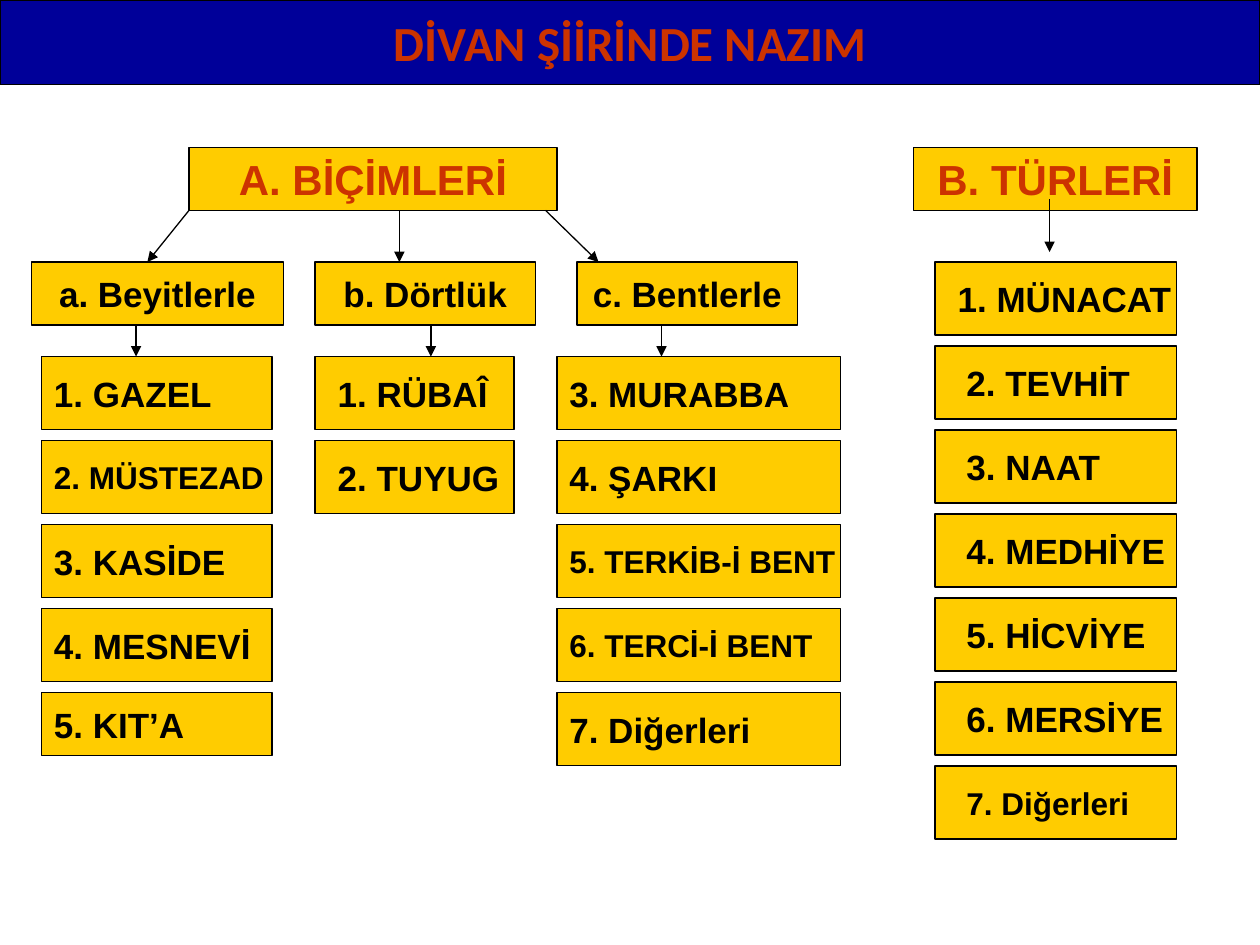
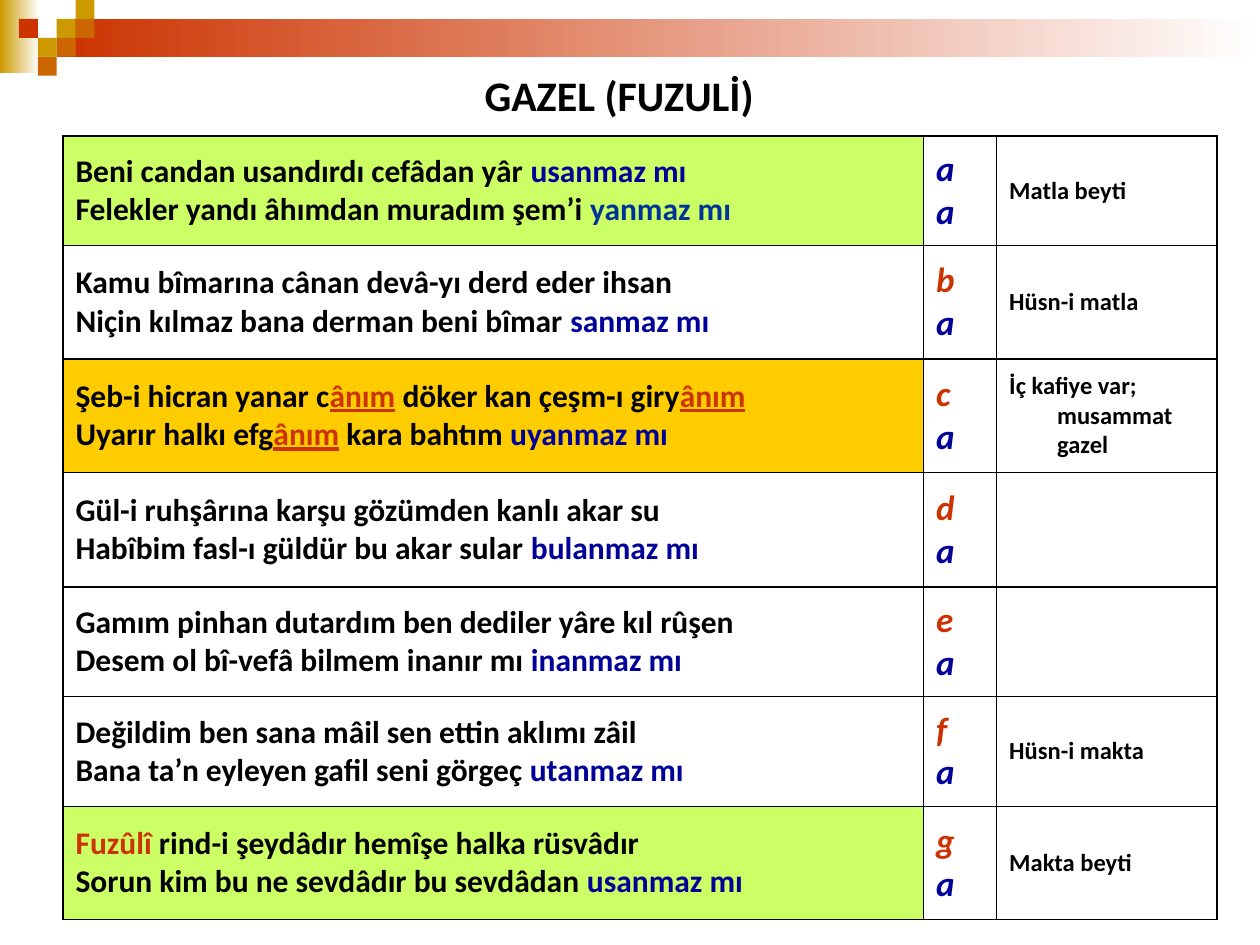
from lxml import etree
from pptx import Presentation
from pptx.dml.color import RGBColor
from pptx.enum.shapes import MSO_CONNECTOR, MSO_SHAPE
from pptx.enum.text import MSO_ANCHOR, PP_ALIGN
from pptx.oxml.ns import qn
from pptx.util import Inches, Pt

RECT = MSO_SHAPE.RECTANGLE
STRAIGHT = MSO_CONNECTOR.STRAIGHT
MIDDLE = MSO_ANCHOR.MIDDLE
LEFT, CENTER = PP_ALIGN.LEFT, PP_ALIGN.CENTER

BLACK = RGBColor(0x00, 0x00, 0x00)
WHITE = RGBColor(0xFF, 0xFF, 0xFF)
NAVY = RGBColor(0x00, 0x00, 0x99)
BLUE = RGBColor(0x00, 0x33, 0x99)
RED = RGBColor(0xCC, 0x33, 0x00)
AMBER = RGBColor(0xFF, 0xCC, 0x00)
GOLD = RGBColor(0xCC, 0x99, 0x00)
BROWN = RGBColor(0xCC, 0x66, 0x00)
LIME = RGBColor(0xCC, 0xFF, 0x66)

HEAD, BODY = "Calibri", "Arial"
PITCH = 2 / 3   # step from one list box to the next
TALL = 0.58     # height of a list box
UNIT = 0.15     # side of a corner square

# Lists of slide 1: left, top, width, left pad, items of (text, size)
LISTS = [
    (0.33, 2.83, 1.83, 0.1, [("1. GAZEL", 20), ("2. MÜSTEZAD", 18), ("3. KASİDE", 20),
                             ("4. MESNEVİ", 20), ("5. KIT’A", 20)]),
    (2.5, 2.83, 1.58, 0.18, [("1. RÜBAÎ", 20), ("2. TUYUG", 20)]),
    (4.42, 2.83, 2.25, 0.1, [("3. MURABBA", 20), ("4. ŞARKI", 20), ("5. TERKİB-İ BENT", 18),
                             ("6. TERCİ-İ BENT", 18), ("7. Diğerleri", 20)]),
    (7.42, 2.08, 1.92, 0.18, [("1. MÜNACAT", 20)]),
    (7.42, 2.08 + PITCH, 1.92, 0.25, [("2. TEVHİT", 20), ("3. NAAT", 20), ("4. MEDHİYE", 20),
                                      ("5. HİCVİYE", 20), ("6. MERSİYE", 20),
                                      ("7. Diğerleri", 18)]),
]
# Heading boxes: left, top, width, text, size, colour
HEADS = [
    (1.5, 1.17, 2.92, "A. BİÇİMLERİ", 24, RED),
    (7.25, 1.17, 2.25, "B. TÜRLERİ", 24, RED),
    (0.25, 2.08, 2, "a. Beyitlerle", 20, BLACK),
    (2.5, 2.08, 1.75, "b. Dörtlük", 20, BLACK),
    (4.58, 2.08, 1.75, "c. Bentlerle", 20, BLACK),
]
ARROWS = [
    (1.5, 1.67, 1.17, 2.08), (3.17, 1.67, 3.17, 2.08), (4.33, 1.67, 4.75, 2.08),
    (1.08, 2.58, 1.08, 2.83), (3.42, 2.58, 3.42, 2.83), (5.25, 2.58, 5.25, 2.83),
    (8.33, 1.58, 8.33, 2),
]

# Couplets: fill, row height, two lines of (text, colour, underlined), rhyme, note
COUPLETS = [
    (LIME, 0.87,
     [("Beni candan usandırdı cefâdan yâr ",), ("usanmaz mı", NAVY)],
     [("Felekler yandı âhımdan muradım şem’i ",), ("yanmaz mı", BLUE)],
     "a", "Matla beyti"),
    (None, 0.9,
     [("Kamu bîmarına cânan devâ-yı derd eder ihsan",)],
     [("Niçin kılmaz bana derman beni bîmar ",), ("sanmaz mı", NAVY)],
     "b", "Hüsn-i matla"),
    (AMBER, 0.9,
     [("Şeb-i hicran yanar c",), ("ânım", RED, True),
      (" döker kan çeşm-ı giry",), ("ânım", RED, True)],
     [("Uyarır halkı efg",), ("ânım", RED, True),
      (" kara bahtım ",), ("uyanmaz mı", NAVY)],
     "c", "İç kafiye var; musammat gazel"),
    (None, 0.91,
     [("Gül-i ruhşârına karşu gözümden kanlı akar su",)],
     [("Habîbim fasl-ı güldür bu akar sular ",), ("bulanmaz mı", NAVY)],
     "d", ""),
    (None, 0.87,
     [("Gamım pinhan dutardım ben dediler yâre kıl rûşen",)],
     [("Desem ol bî-vefâ bilmem inanır mı ",), ("inanmaz mı", NAVY)],
     "e", ""),
    (None, 0.87,
     [("Değildim ben sana mâil sen ettin aklımı zâil",)],
     [("Bana ta’n eyleyen gafil seni görgeç ",), ("utanmaz mı", NAVY)],
     "f", "Hüsn-i makta"),
    (LIME, 0.9,
     [("Fuzûlî", RED), (" rind-i şeydâdır hemîşe halka rüsvâdır",)],
     [("Sorun kim bu ne sevdâdır bu sevdâdan ",), ("usanmaz mı", NAVY)],
     "g", "Makta beyti"),
]


def add_run(para, text, size, font, color=BLACK, under=False, slant=False):
    run = para.add_run()
    run.text = text
    run.font.size = Pt(size)
    run.font.name = font
    run.font.bold = True
    run.font.color.rgb = color
    if under:
        run.font.underline = True
    if slant:
        run.font.italic = True


def add_rect(slide, left, top, width, height, fill, line=None):
    rect = slide.shapes.add_shape(RECT, Inches(left), Inches(top), Inches(width), Inches(height))
    rect.shadow.inherit = False
    rect.fill.solid()
    rect.fill.fore_color.rgb = fill
    if line is None:
        rect.line.fill.background()
    else:
        rect.line.color.rgb = line
        rect.line.width = Pt(0.75)
    return rect


def add_label(rect, text, size, font, color, align=CENTER, pad=0.1):
    frame = rect.text_frame
    frame.word_wrap = False
    frame.vertical_anchor = MIDDLE
    frame.margin_left = Inches(pad)
    if align == LEFT:
        frame.margin_right = 0
    para = frame.paragraphs[0]
    para.alignment = align
    add_run(para, text, size, font, color)


def add_fade(slide, left, top, width, height, color):
    rect = add_rect(slide, left, top, width, height, color)
    rect.fill.gradient()
    rect.fill.gradient_angle = 0
    for stop, tone, place in zip(rect.fill.gradient_stops, (color, WHITE), (0, 1)):
        stop.color.rgb = tone
        stop.position = place


def add_arrow(slide, x1, y1, x2, y2):
    arrow = slide.shapes.add_connector(STRAIGHT, Inches(x1), Inches(y1), Inches(x2), Inches(y2))
    arrow.line.color.rgb = BLACK
    arrow.line.width = Pt(0.75)
    etree.SubElement(arrow.line._get_or_add_ln(), qn("a:tailEnd"), type="triangle")
    etree.SubElement(arrow._element.spPr, qn("a:effectLst"))


def add_list(slide, left, top, width, pad, items):
    for row, (text, size) in enumerate(items):
        high = 0.5 if text == "5. KIT’A" else TALL
        rect = add_rect(slide, left, top + row * PITCH, width, high, AMBER, BLACK)
        add_label(rect, text, size, BODY, BLACK, LEFT, pad)


def add_corner(slide, left, top):
    # Fading bands, then squares on a grid
    add_fade(slide, left, top, 0.31, 0.58, GOLD)
    add_fade(slide, left + 3 * UNIT, top + UNIT, 9.55, 0.3, RED)
    squares = [(3, 1, GOLD), (4, 0, GOLD), (4, 1, BROWN), (2, 2, GOLD),
               (1, 1, RED), (3, 2, BROWN), (2, 3, BROWN)]
    for col, row, color in squares:
        add_rect(slide, left + col * UNIT, top + row * UNIT, UNIT, UNIT, color)


def set_cell(cell, lines, size, fill=None, slant=False):
    props = cell._tc.get_or_add_tcPr()
    for side in ("lnL", "lnR", "lnT", "lnB"):
        edge = etree.SubElement(props, qn("a:" + side), w=str(Pt(1)))
        solid = etree.SubElement(edge, qn("a:solidFill"))
        etree.SubElement(solid, qn("a:srgbClr"), val=str(BLACK))
    if fill is None:
        cell.fill.background()
    else:
        cell.fill.solid()
        cell.fill.fore_color.rgb = fill
    cell.vertical_anchor = MIDDLE
    for num, runs in enumerate(lines):
        para = cell.text_frame.add_paragraph() if num else cell.text_frame.paragraphs[0]
        # Hanging indent
        indent = para._p.get_or_add_pPr()
        indent.set("marL", str(Inches(0.38)))
        indent.set("indent", str(-Inches(0.38)))
        for text, *style in runs:
            add_run(para, text, size, HEAD, *style, slant=slant)


def add_poem(slide, left, top, widths):
    high = sum(couplet[1] for couplet in COUPLETS)
    table = slide.shapes.add_table(len(COUPLETS), len(widths), Inches(left), Inches(top),
                                   Inches(sum(widths)), Inches(high)).table
    table.first_row = table.horz_banding = False
    for col, width in zip(table.columns, widths):
        col.width = Inches(width)
    for num, (fill, tall, first, second, rhyme, note) in enumerate(COUPLETS):
        table.rows[num].height = Inches(tall)
        tone = NAVY if rhyme == "a" else RED
        set_cell(table.cell(num, 0), [first, second], 18, fill)
        set_cell(table.cell(num, 1), [[(rhyme, tone)], [("a", NAVY)]], 20, slant=True)
        set_cell(table.cell(num, 2), [[(note,)]] if note else [], 14)


def build_map(slide):
    # Title band
    band = add_rect(slide, 0, 0, 10, 0.67, NAVY, BLACK)
    add_label(band, "DİVAN ŞİİRİNDE NAZIM", 28, HEAD, RED)
    # Headings, lists and arrows
    for left, top, width, text, size, color in HEADS:
        add_label(add_rect(slide, left, top, width, 0.5, AMBER, BLACK), text, size, BODY, color)
    for group in LISTS:
        add_list(slide, *group)
    for ends in ARROWS:
        add_arrow(slide, *ends)


def build_gazel(slide):
    add_corner(slide, 0, 0)
    add_poem(slide, 0.5, 1.08, (6.83, 0.58, 1.75))
    # Title
    box = slide.shapes.add_textbox(Inches(2.58), Inches(0.5), Inches(4.67), Inches(0.51))
    box.text_frame.word_wrap = True
    para = box.text_frame.paragraphs[0]
    para.alignment = CENTER
    add_run(para, "GAZEL (FUZULİ)", 24, HEAD)


def main():
    deck = Presentation()
    deck.slide_width, deck.slide_height = Inches(10), Inches(7.5)
    for build in (build_map, build_gazel):
        build(deck.slides.add_slide(deck.slide_layouts[6]))
    deck.save("out.pptx")


if __name__ == "__main__":
    main()
